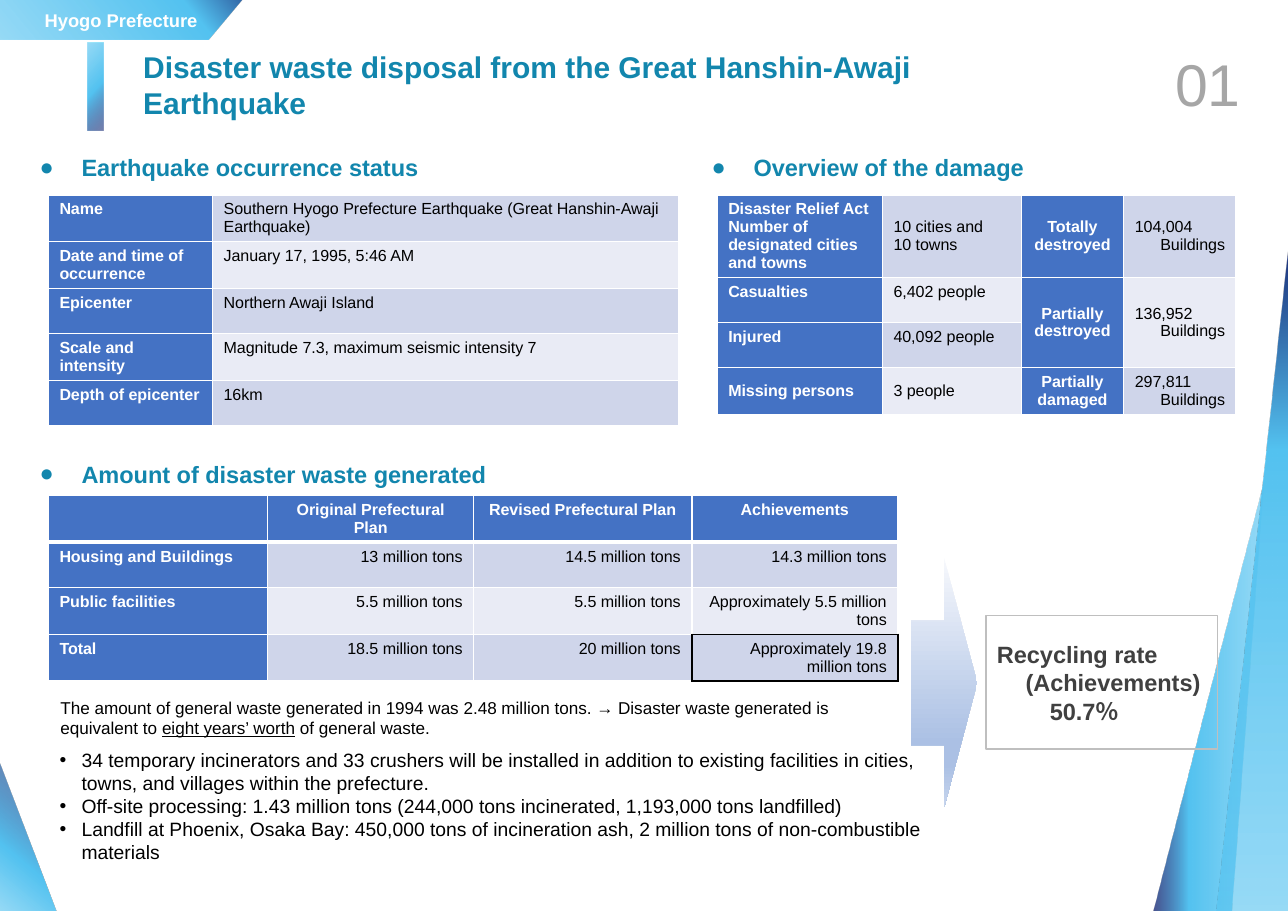
"""Build the disaster waste disposal slide for Hyogo Prefecture."""
from dataclasses import dataclass
from typing import NamedTuple

from pptx import Presentation
from pptx.dml.color import RGBColor
from pptx.enum.shapes import MSO_SHAPE as Preset
from pptx.enum.text import MSO_ANCHOR as Anchor, MSO_AUTO_SIZE as AutoSize, PP_ALIGN as Align
from pptx.oxml import parse_xml
from pptx.oxml.ns import nsdecls, qn
from pptx.util import Inches, Pt

COLOURS = {
    "white": "FFFFFF", "black": "000000", "teal": "1286AD", "sky": "54C3F1",
    "navy": "1C2B76", "steel": "336AA9", "label": "4472C4", "band": "CFD5EA",
    "pale_band": "E9EBF5", "number": "A6A6A6", "rate": "404040",
    "rate_line": "BFBFBF", "mist": "F6F8FC", "arrow": "ABC0E4", "arrow_end": "C7D5ED",
}


class Stop(NamedTuple):
    """One gradient stop."""
    position: int
    colour: str
    opacity: int = 100


class Heading(NamedTuple):
    """A section heading and its place."""
    holder: int
    text: str
    left: float
    top: float


@dataclass
class Gradient:
    """A linear gradient."""
    angle: int
    stops: list[Stop]


@dataclass
class Ornament:
    """A gradient preset shape without outline."""
    preset: Preset
    place: tuple[float, float, float, float]
    gradient: Gradient
    flipped: bool = False


@dataclass
class Grid:
    """A table with label cells and banded value cells."""
    left: float
    top: float
    columns: list[float]
    rows: list[list[str]]
    labels: tuple[int, ...] = (0,)
    header: int = 0
    value_align: Align = Align.LEFT
    middle_columns: tuple[int, ...] = ()


def sky_gradient(angle: int, middle: int, end_opacity: int = 60) -> Gradient:
    """Return the sky to navy gradient."""
    return Gradient(angle, [Stop(0, "sky", 60), Stop(middle, "sky"), Stop(100, "navy", end_opacity)])


HEADINGS = [
    Heading(1, "Earthquake occurrence status", 0.26, 1.38),
    Heading(2, "Overview of the damage", 6.36, 1.38),
    Heading(3, "Amount of disaster waste generated", 0.26, 4.16),
]
ORNAMENTS = [
    Ornament(Preset.RIGHT_TRIANGLE, (0, 6.93, 0.51, 1.34), sky_gradient(310, 35)),
    Ornament(Preset.RIGHT_TRIANGLE, (11.04, 2.2, 0.65, 6.07), sky_gradient(270, 69, 100), True),
    Ornament(Preset.RECTANGLE, (0.8, 0.39, 0.14, 0.79), sky_gradient(40, 53)),
    Ornament(Preset.RIGHT_ARROW, (8.27, 5.07, 0.6, 2.26), Gradient(90, [
        Stop(0, "mist"), Stop(74, "arrow"), Stop(83, "arrow"), Stop(100, "arrow_end")])),
]
STATUS = Grid(0.44, 1.77, [1.49, 4.23], [
    ["Name", "Southern Hyogo Prefecture Earthquake (Great Hanshin-Awaji Earthquake)"],
    ["Date and time of occurrence", "January 17, 1995, 5:46 AM"],
    ["Epicenter", "Northern Awaji Island"],
    ["Scale and intensity", "Magnitude 7.3, maximum seismic intensity 7"],
    ["Depth of epicenter", "16km"],
])
DAMAGE = Grid(6.51, 1.77, [1.5, 1.26, 0.93, 1.02], [
    ["Disaster Relief Act\nNumber of designated cities and towns", "10 cities and\v10 towns",
     "Totally destroyed", "104,004\nBuildings"],
    ["Casualties", "6,402 people", "Partially destroyed", "136,952\nBuildings"],
    ["Injured", "40,092 people", "", ""],
    ["Missing persons", "3 people", "Partially\ndamaged", "297,811\nBuildings"],
], labels=(0, 2), middle_columns=(2, 3))
WASTE = Grid(0.44, 4.5, [1.99, 1.87, 1.98, 1.87], [
    ["", "Original Prefectural Plan", "Revised Prefectural Plan", "Achievements"],
    ["Housing and Buildings", "13 million tons", "14.5 million tons", "14.3 million tons"],
    ["Public facilities", "5.5 million tons", "5.5 million tons", "Approximately 5.5 million tons"],
    ["Total", "18.5 million tons", "20 million tons", "Approximately 19.8 million tons"],
], header=1, value_align=Align.RIGHT)
LIST = """34 temporary incinerators and 33 crushers will be installed in addition to existing facilities in cities, towns, and villages within the prefecture.
Off-site processing: 1.43 million tons (244,000 tons incinerated, 1,193,000 tons landfilled)
Landfill at Phoenix, Osaka Bay: 450,000 tons of incineration ash, 2 million tons of non-combustible materials"""


def rgb(name: str) -> RGBColor:
    """Look up a colour."""
    return RGBColor.from_string(COLOURS[name])


def style(frame, size: float, colour: str, bold: bool = False, align: Align = Align.LEFT) -> None:
    """Format every paragraph of a frame."""
    for para in frame.paragraphs:
        para.alignment = align
        para.line_spacing = 1.0
        para.space_before = para.space_after = Pt(0)
        for span in para.runs:
            font = span.font
            font.name, font.size, font.bold = "Arial", Pt(size), bold
            font.color.rgb = rgb(colour)


def set_frame(shape, anchor: Anchor, text: str):
    """Fill a wrapped, fixed-size text frame."""
    frame = shape.text_frame
    frame.word_wrap, frame.auto_size = True, AutoSize.NONE
    frame.vertical_anchor = anchor
    frame.text = text
    return frame


def indent(para, left: float, first: float = 0, bullet: str = "") -> None:
    """Set the paragraph indents and an optional bullet."""
    props = para._p.get_or_add_pPr()
    props.set("marL", str(Inches(left)))
    props.set("indent", str(Inches(first)))
    if bullet:
        props.append(parse_xml(f'<a:buFont {nsdecls("a")} typeface="Arial"/>'))
        props.append(parse_xml(f'<a:buChar {nsdecls("a")} char="{bullet}"/>'))


def move(shape, *place: float) -> None:
    """Place a shape."""
    shape.left, shape.top, shape.width, shape.height = map(Inches, place)


def paint(shape, gradient: Gradient) -> None:
    """Give a shape a gradient and neither line nor shadow."""
    stops = "".join(
        f'<a:gs pos="{stop.position * 1000}"><a:srgbClr val="{COLOURS[stop.colour]}">'
        f'<a:alpha val="{stop.opacity * 1000}"/></a:srgbClr></a:gs>' for stop in gradient.stops)
    shape.shadow.inherit = False
    shape.line.fill.background()
    shape.fill.background()
    props = shape._element.spPr
    props.replace(props.find(qn("a:noFill")), parse_xml(
        f'<a:gradFill {nsdecls("a")} rotWithShape="1"><a:gsLst>{stops}</a:gsLst>'
        f'<a:lin ang="{gradient.angle * 60000}" scaled="0"/></a:gradFill>'))


def add_outline(page, points: list[tuple[float, float]], gradient: Gradient):
    """Draw a closed gradient polygon."""
    corners = [(Inches(x), Inches(y)) for x, y in points]
    builder = page.shapes.build_freeform(*corners[0])
    builder.add_line_segments(corners[1:], close=True)
    shape = builder.convert_to_shape()
    paint(shape, gradient)
    return shape


def set_border(cell, sides: str, colour: str = "white", width: int = 1) -> None:
    """Draw the given sides (L, R, T, B) of a cell."""
    props = cell._tc.get_or_add_tcPr()
    for side in sides:
        for old in props.findall(qn(f"a:ln{side}")):
            props.remove(old)
        props.insert(sum(props.find(qn(f"a:ln{other}")) is not None for other in "LRTB"["LRTB".index(side)::-1]),
                     parse_xml(f'<a:ln{side} {nsdecls("a")} w="{Pt(width)}"><a:solidFill>'
                               f'<a:srgbClr val="{COLOURS[colour]}"/></a:solidFill></a:ln{side}>'))


def set_fill(cell, colour: str) -> None:
    """Fill a cell."""
    cell.fill.solid()
    cell.fill.fore_color.rgb = rgb(colour)


def add_grid(page, grid: Grid):
    """Draw a table."""
    height = 0.41
    table = page.shapes.add_table(
        len(grid.rows), len(grid.columns), Inches(grid.left), Inches(grid.top),
        Inches(sum(grid.columns)), Inches(height * len(grid.rows))).table
    table.first_row = table.horz_banding = False
    for column, width in zip(table.columns, grid.columns):
        column.width = Inches(width)
    for r, row in enumerate(grid.rows):
        table.rows[r].height = Inches(height)
        for c, text in enumerate(row):
            cell = table.cell(r, c)
            label = c in grid.labels or r < grid.header
            centred = label and c > 0
            cell.text_frame.text = text
            align = Align.CENTER if centred else Align.LEFT if label else grid.value_align
            style(cell.text_frame, 10.5, "white" if label else "black", label, align)
            cell.vertical_anchor = Anchor.MIDDLE if c in grid.middle_columns else Anchor.TOP
            set_fill(cell, "label" if label else ("band", "pale_band")[(r - grid.header) % 2])
            set_border(cell, "LRTB")
            if r < grid.header:
                set_border(cell, "B", width=3)
    return table


def add_text(page, place: tuple[float, ...], text: str, anchor: Anchor = Anchor.TOP):
    """Add a text box and return its frame."""
    return set_frame(page.shapes.add_textbox(*map(Inches, place)), anchor, text)


def main() -> None:
    """Compose and save the deck."""
    deck = Presentation()
    deck.slide_width, deck.slide_height = Inches(11.69), Inches(8.27)
    page = deck.slides.add_slide(deck.slide_layouts.get_by_name("Comparison"))
    holders = {holder.placeholder_format.idx: holder for holder in page.placeholders}
    for idx in set(holders) - {0, 1, 2, 3, 4}:
        holders[idx]._element.getparent().remove(holders[idx]._element)

    banner = add_outline(page, [(0, 0), (2.2, 0), (1.89, 0.36), (0, 0.36)], Gradient(320, [
        Stop(0, "sky", 60), Stop(78, "sky"), Stop(99, "steel"), Stop(100, "navy", 62)]))
    style(set_frame(banner, Anchor.MIDDLE, "Hyogo Prefecture"), 12, "white", True, Align.CENTER)
    add_outline(page, [(11.18, 8.27), (11.47, 4.37), (10.47, 8.27)], sky_gradient(180, 68, 80))
    for ornament in ORNAMENTS:
        shape = page.shapes.add_shape(ornament.preset, *map(Inches, ornament.place))
        paint(shape, ornament.gradient)
        if ornament.flipped:
            shape._element.spPr.find(qn("a:xfrm")).set("flipH", "1")

    move(holders[0], 1.25, 0.39, 7.7, 1)
    title = set_frame(holders[0], Anchor.TOP, "Disaster waste disposal from the Great Hanshin-Awaji Earthquake")
    title.margin_left = title.margin_right = title.margin_top = title.margin_bottom = Inches(0.05)
    style(title, 19.6, "teal", True)
    for heading in HEADINGS:
        box = holders[heading.holder]
        move(box, heading.left, heading.top, 4.42, 0.34)
        frame = set_frame(box, Anchor.MIDDLE, heading.text)
        frame.margin_top, frame.margin_bottom = 0, Inches(0.06)
        indent(frame.paragraphs[0], 0.38, -0.38, "●")
        style(frame, 15.4, "teal", True)
    move(holders[4], 0.44, 6.74, 8.03, 1.01)
    points = set_frame(holders[4], Anchor.TOP, LIST)
    for para in points.paragraphs:
        indent(para, 0.2, -0.2, "•")
    style(points, 12.6, "black")

    number = add_text(page, (10.11, 0.49, 1.25, 0.44), "01", Anchor.MIDDLE)
    number.margin_top, number.margin_bottom = Inches(0.09), 0
    style(number, 38.5, "number", align=Align.RIGHT)

    add_grid(page, STATUS)
    damage = add_grid(page, DAMAGE)
    for r, c in ((0, 1), (3, 0), (3, 1)):
        damage.cell(r, c).vertical_anchor = Anchor.MIDDLE
    for r in (0, 1, 3):
        damage.cell(r, 3).text_frame.paragraphs[1].alignment = Align.RIGHT
    for c in (2, 3):
        damage.cell(1, c).merge(damage.cell(2, c))
    set_fill(damage.cell(3, 3), "band")
    waste = add_grid(page, WASTE)
    for r, c, sides in ((3, 3, "LRTB"), (2, 3, "B"), (3, 2, "R")):
        set_border(waste.cell(r, c), sides, "black")

    note = add_text(page, (0.45, 6.28, 7.55, 0.37), "")
    for text in ("The amount of general waste generated in 1994 was 2.48 million tons. → "
                 "Disaster waste generated is equivalent to ", "eight years’ worth", " of general waste."):
        note.paragraphs[0].add_run().text = text
    style(note, 11.2, "black")
    note.paragraphs[0].runs[1].font.underline = True

    rate = page.shapes.add_shape(Preset.RECTANGLE, *map(Inches, (8.95, 5.59, 2.1, 1.21)))
    rate.shadow.inherit = False
    rate.fill.background()
    rate.line.color.rgb, rate.line.width = rgb("rate_line"), Pt(0.75)
    frame = set_frame(rate, Anchor.MIDDLE, "Recycling rate\n(Achievements)\n50.7％")
    for para, left in zip(frame.paragraphs, (0, 0.26, 0.48)):
        indent(para, left)
    style(frame, 15.4, "rate", True)
    deck.save("out.pptx")


if __name__ == "__main__":
    main()
